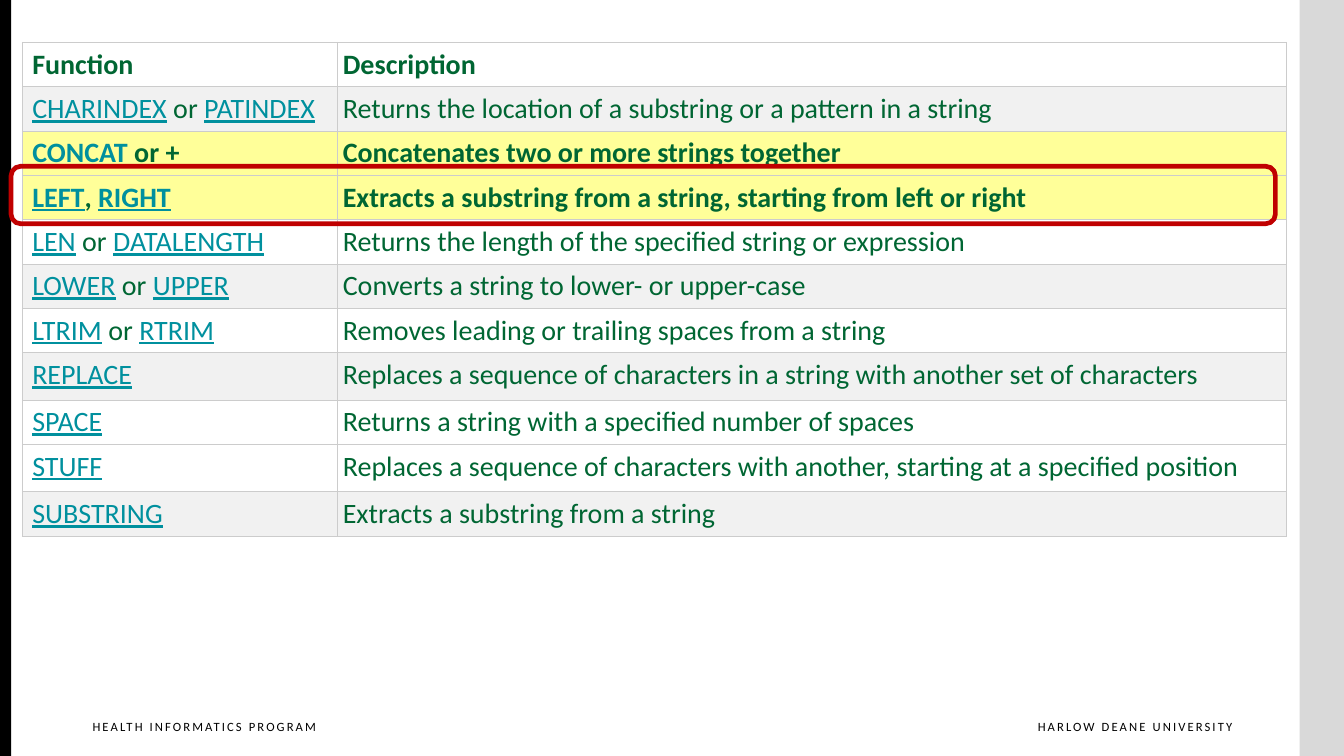
from lxml import etree
from pptx import Presentation
from pptx.dml.color import RGBColor
from pptx.enum.shapes import MSO_SHAPE
from pptx.enum.text import PP_ALIGN
from pptx.oxml.ns import qn
from pptx.util import Inches, Pt

RECT, ROUNDED = MSO_SHAPE.RECTANGLE, MSO_SHAPE.ROUNDED_RECTANGLE
LEFT, RIGHT = PP_ALIGN.LEFT, PP_ALIGN.RIGHT

FONT = "Calibri"
GREEN, TEAL, BLACK, RED = "006633", "00909E", "000000", "C00000"
WHITE, GREY, YELLOW, BORDER = "FFFFFF", "F1F1F1", "FFFF99", "CCCCCC"

HEADINGS = ("Function", "Description")
FUNCTIONS = [
    (("CHARINDEX", " or ", "PATINDEX"), "Returns the location of a substring or a pattern in a string", GREY),
    (("CONCAT", " or +"), "Concatenates two or more strings together", YELLOW),
    (("LEFT", ", ", "RIGHT"), "Extracts a substring from a string, starting from left or right", YELLOW),
    (("LEN", " or ", "DATALENGTH"), "Returns the length of the specified string or expression", WHITE),
    (("LOWER", " or ", "UPPER"), "Converts a string to lower- or upper-case", GREY),
    (("LTRIM", " or ", "RTRIM"), "Removes leading or trailing spaces from a string", WHITE),
    (("REPLACE",), "Replaces a sequence of characters in a string with another set of characters", GREY),
    (("SPACE",), "Returns a string with a specified number of spaces", WHITE),
    (("STUFF",), "Replaces a sequence of characters with another, starting at a specified position", WHITE),
    (("SUBSTRING",), "Extracts a substring from a string", GREY),
]
TALL_ROWS = ("REPLACE", "STUFF")
COLUMN_WIDTHS = (3.13, 9.41)
ROW_HEIGHT, TALL_HEIGHT = 0.44, 0.47

SIDE_BARS = [(12.89, 0.44, "D9D9D9"), (0, 0.11, BLACK)]
FOOTERS = [
    ("HARLOW DEANE UNIVERSITY", 9.87, 2.35, RIGHT),
    ("HEALTH INFORMATICS PROGRAM", 0.82, 2.54, LEFT),
]


def rgb(value):
    return RGBColor.from_string(value)


def style(run, size, color, bold=False, underline=False):
    font = run.font
    font.name, font.size, font.bold, font.underline = FONT, Pt(size), bold, underline
    font.color.rgb = rgb(color)


def add_side_bar(slide, left, width, color):
    bar = slide.shapes.add_shape(RECT, Inches(left), 0, Inches(width), Inches(7.5))
    bar.shadow.inherit = False
    bar.fill.solid()
    bar.fill.fore_color.rgb = rgb(color)
    bar.line.fill.background()


def add_footer(slide, text, left, width, align):
    frame = slide.shapes.add_textbox(Inches(left), Inches(7.08), Inches(width), Inches(0.33)).text_frame
    frame.word_wrap = True
    frame.margin_right = 0
    paragraph = frame.paragraphs[0]
    paragraph.text = text
    paragraph.alignment = align
    run = paragraph.runs[0]
    style(run, 9, BLACK)
    run.font._element.set("spc", "150")


def add_borders(cell):
    properties = cell._tc.get_or_add_tcPr()
    for side in ("a:lnL", "a:lnR", "a:lnT", "a:lnB"):
        line = etree.SubElement(properties, qn(side), w=str(Pt(0.75)))
        fill = etree.SubElement(line, qn("a:solidFill"))
        etree.SubElement(fill, qn("a:srgbClr"), val=BORDER)


def fill_cell(cell, pieces, background, left_margin, bold, linked):
    add_borders(cell)
    cell.fill.solid()
    cell.fill.fore_color.rgb = rgb(background)
    cell.margin_left = Inches(left_margin)
    cell.margin_right = cell.margin_top = cell.margin_bottom = Inches(0.05)
    paragraph = cell.text_frame.paragraphs[0]
    for index, piece in enumerate(pieces):
        run = paragraph.add_run()
        run.text = piece
        is_link = linked and index % 2 == 0
        style(run, 20, TEAL if is_link else GREEN, bold, is_link)


def add_function_table(slide):
    rows = [((HEADINGS[0],), HEADINGS[1], WHITE)] + FUNCTIONS
    heights = [TALL_HEIGHT if names[0] in TALL_ROWS else ROW_HEIGHT for names, _, _ in rows]
    table = slide.shapes.add_table(
        len(rows), len(COLUMN_WIDTHS), Inches(0.22), Inches(0.42),
        Inches(sum(COLUMN_WIDTHS)), Inches(sum(heights))).table
    table.first_row = table.horz_banding = False
    for column, width in zip(table.columns, COLUMN_WIDTHS):
        column.width = Inches(width)
    for index, (names, description, background) in enumerate(rows):
        table.rows[index].height = Inches(heights[index])
        bold = index == 0 or background == YELLOW
        fill_cell(table.cell(index, 0), names, background, 0.1, bold, index > 0)
        fill_cell(table.cell(index, 1), (description,), background, 0.05, bold, False)


def add_highlight(slide):
    highlight = slide.shapes.add_shape(ROUNDED, Inches(0.11), Inches(1.65), Inches(12.54), Inches(0.57))
    highlight.shadow.inherit = False
    highlight.fill.background()
    highlight.line.color.rgb = rgb(RED)
    highlight.line.width = Pt(3.35)


def main():
    deck = Presentation()
    deck.slide_width, deck.slide_height = Inches(13.33), Inches(7.5)
    slide = deck.slides.add_slide(deck.slide_layouts[6])
    for bar in SIDE_BARS:
        add_side_bar(slide, *bar)
    for footer in FOOTERS:
        add_footer(slide, *footer)
    add_function_table(slide)
    add_highlight(slide)
    deck.save("out.pptx")


if __name__ == "__main__":
    main()
